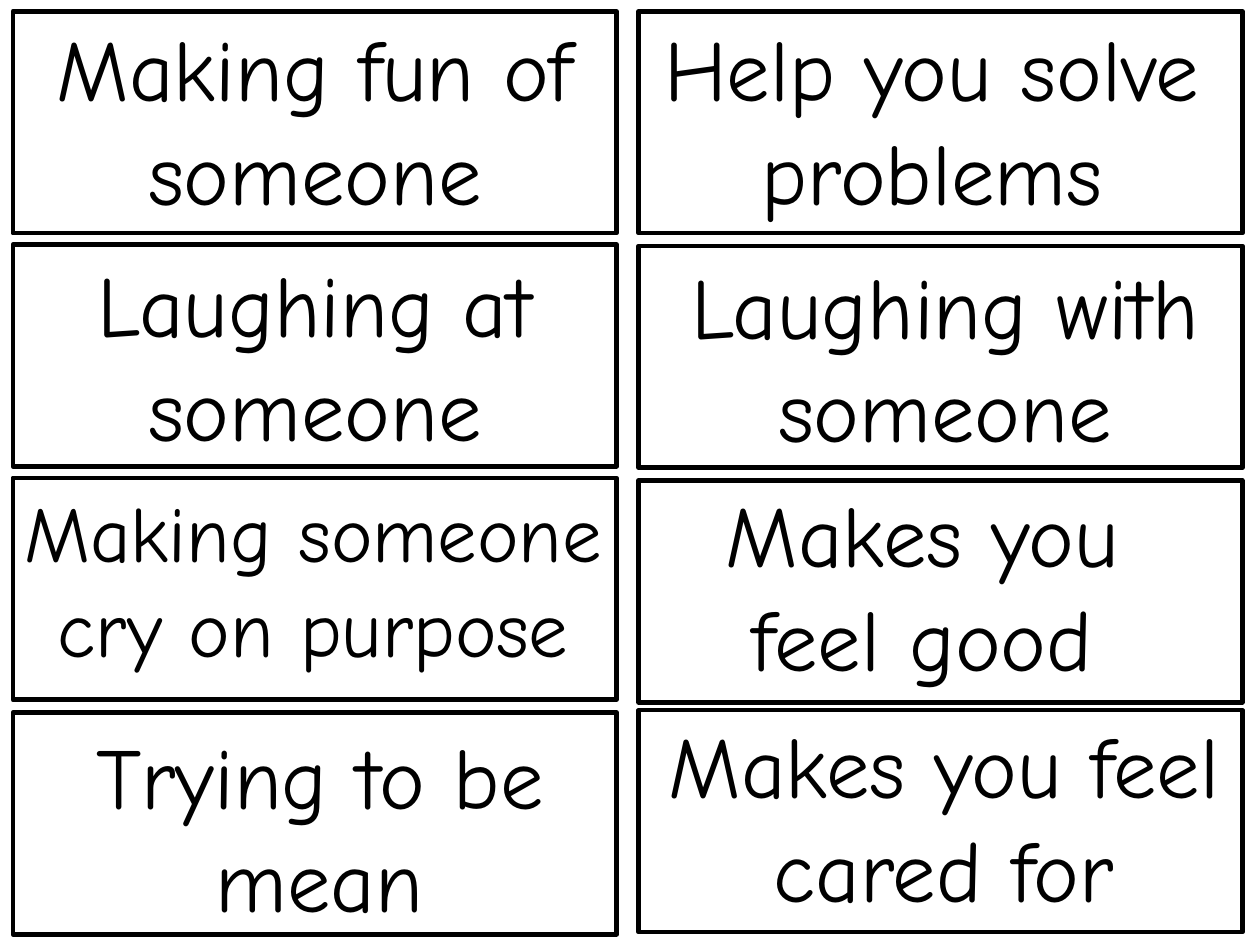
from pptx import Presentation
from pptx.dml.color import RGBColor
from pptx.enum.shapes import MSO_SHAPE as Shape
from pptx.enum.text import MSO_AUTO_SIZE as AutoSize, PP_ALIGN as Align
from pptx.util import Cm, Pt


def color(hex_code):
    return RGBColor.from_string(hex_code)


deck = Presentation()
deck.slide_width, deck.slide_height = Cm(45.16), Cm(33.86)
page = deck.slides.add_slide(deck.slide_layouts[6])

# Card frames: left edge and row tops of each column
columns = [
    (0.46, [0.41, 8.76, 17.12, 25.53]),
    (22.89, [0.41, 8.81, 17.22, 25.45]),
]
for left, tops in columns:
    for top in tops:
        card = page.shapes.add_shape(
            Shape.RECTANGLE, Cm(left), Cm(top), Cm(21.64), Cm(7.95))
        card.shadow.inherit = False
        card.fill.solid()
        card.fill.fore_color.rgb = color("FFFFFF")
        card.line.color.rgb = color("000000")
        card.line.width = Pt(4.5)

# Card phrases: text, left, top, width, height, font size
phrases = [
    ("Making fun of someone", 1.52, 0.41, 19.53, 7.77, 88),
    ("Laughing at someone", 1.52, 8.86, 19.53, 7.77, 88),
    ("Making someone cry on purpose", -0.23, 17.22, 22.91, 7.09, 80),
    ("Trying to be mean", 0.18, 25.76, 22.56, 7.77, 88),
    ("Help you solve problems", 22.25, 0.41, 22.28, 7.77, 88),
    ("Laughing with someone", 22.58, 8.92, 22.58, 7.77, 88),
    ("Makes you feel good", 23.29, 17.12, 19.53, 7.77, 88),
    ("Makes you feel cared for", 22.96, 25.37, 21.74, 7.77, 88),
]
for phrase, left, top, width, height, size in phrases:
    box = page.shapes.add_textbox(Cm(left), Cm(top), Cm(width), Cm(height))
    frame = box.text_frame
    frame.word_wrap = True
    frame.auto_size = AutoSize.SHAPE_TO_FIT_TEXT
    para = frame.paragraphs[0]
    para.text = phrase
    para.alignment = Align.CENTER
    para.font.name = "Comic Neue"
    para.font.size = Pt(size)
    para.font.color.rgb = color("000000")

deck.save("out.pptx")
